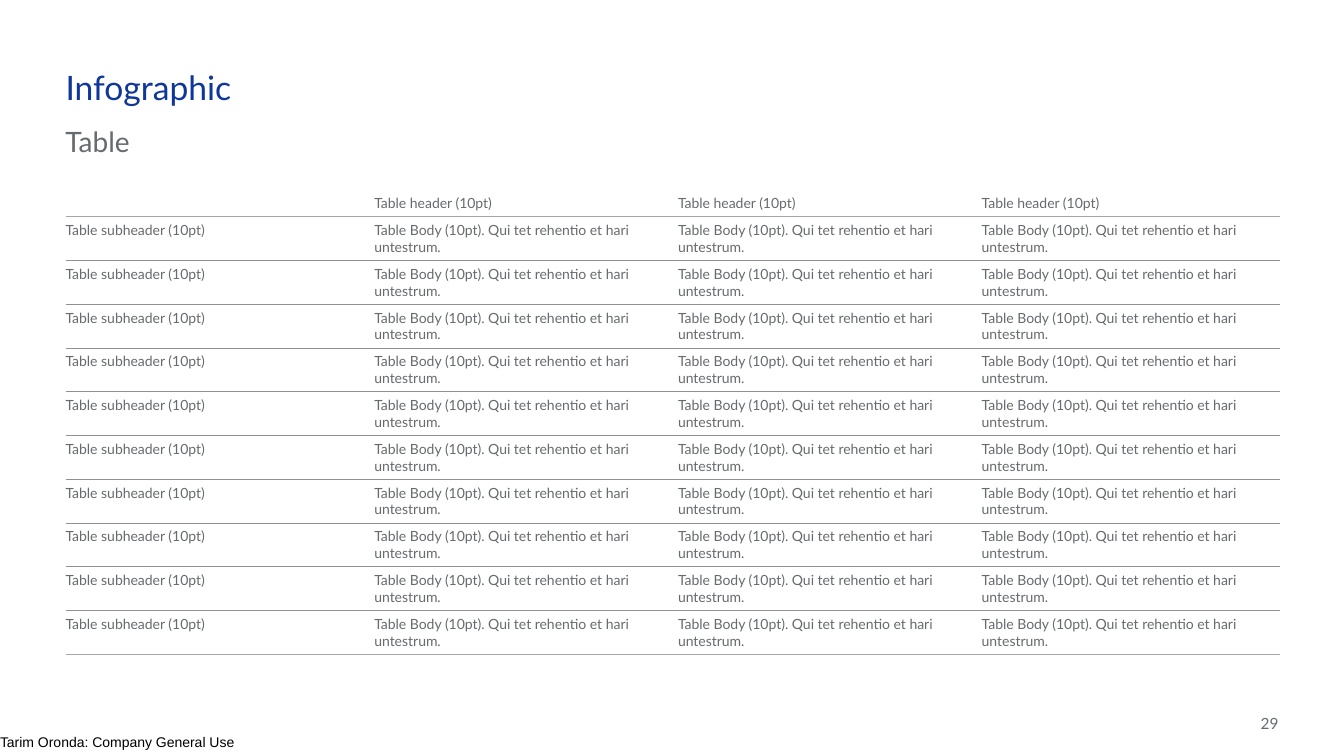
from lxml import etree
from pptx import Presentation
from pptx import util as u
from pptx.dml.color import RGBColor
from pptx.enum import text as t
from pptx.oxml.ns import qn

WIDE, HIGH = u.Inches(13.33), u.Inches(7.5)
GREY, BLUE, BLACK = "676A6E", "0F3699", "000000"
EDGE, RULE = ("A3A5A9", 1), ("8F9194", 0.75)
PAD = u.Inches(0.05)
PLAIN = "{2D5ABB26-0587-4C30-8999-92F81FD0307C}"
BODY = "Table Body (10pt). Qui tet rehentio et hari untestrum."


def paint(hue):
    return RGBColor.from_string(hue)


def share(x, y, w, h):
    return [int(n * full / 100) for n, full in zip((x, y, w, h), (WIDE, HIGH) * 2)]


def write(par, words, size, hue=GREY, font="Lato"):
    run = par.add_run()
    run.text = words
    run.font.size = u.Pt(size)
    run.font.name = font
    run.font.color.rgb = paint(hue)


def label(slide, box, words, size, hue=GREY, font="Lato", side=0, pad=PAD,
          mid=False, wrap=True):
    frame = slide.shapes.add_textbox(*box).text_frame
    frame.word_wrap = wrap
    frame.margin_left = frame.margin_right = side
    frame.margin_top = frame.margin_bottom = pad
    frame.vertical_anchor = t.MSO_ANCHOR.MIDDLE if mid else t.MSO_ANCHOR.TOP
    par = frame.paragraphs[0]
    write(par, words, size, hue, font)
    return par


def heading(slide, box):
    x, y, w, h = box
    inset = u.Inches(0.1)
    title = label(slide, (x, y, w, h // 2), "Infographic", 24, BLUE)
    title.space_before = u.Pt(6)
    props = title._p.get_or_add_pPr()
    props.set("marL", str(u.Inches(0.25)))
    props.set("indent", str(-u.Inches(0.25)))
    sub = label(slide, (x - inset, y + h // 2, w, h // 2), "Table", 20, side=inset)
    sub.space_before = u.Pt(6)


def border(cell, tag, hue, width):
    props = cell._tc.get_or_add_tcPr()
    line = etree.SubElement(props, qn(tag), w=str(u.Pt(width)))
    fill = etree.SubElement(line, qn("a:solidFill"))
    etree.SubElement(fill, qn("a:srgbClr"), val=hue)


def dress(cell, row, col, last):
    cell.margin_left = 0 if row and not col else PAD
    cell.margin_right = cell.margin_top = cell.margin_bottom = PAD
    cell.vertical_anchor = t.MSO_ANCHOR.TOP if row else t.MSO_ANCHOR.BOTTOM
    if row:
        border(cell, "a:lnT", *(EDGE if row == 1 else RULE))
    border(cell, "a:lnB", *(EDGE if row in (0, last) else RULE))
    cell.fill.background()


def grid(slide, box, data):
    x, y, w, h = box
    rows, cols = len(data), len(data[0])
    table = slide.shapes.add_table(rows, cols, x, y, w, h).table
    table.first_row = table.horz_banding = False
    table._tbl.tblPr.find(qn("a:tableStyleId")).text = PLAIN
    top = u.Inches(0.37)
    for col in table.columns:
        col.width = w // cols
    for i, words in enumerate(data):
        table.rows[i].height = (h - top) // (rows - 1) if i else top
        for j, word in enumerate(words):
            cell = table.cell(i, j)
            dress(cell, i, j, rows - 1)
            par = cell.text_frame.paragraphs[0]
            if word:
                write(par, word, 10)
            else:
                etree.SubElement(par._p, qn("a:endParaRPr"), sz="1000")


def footer(slide, box):
    x, y, w, h = box
    page = label(slide, (x + int(w * 0.922), y, int(w * 0.0293), int(h * 0.55)),
                 "29", 11, mid=True)
    page.alignment = t.PP_ALIGN.RIGHT
    label(slide, (x, y + int(h * 0.4), int(w * 0.204), int(h * 0.6)),
          "Tarim Oronda: Company General Use", 10, BLACK, "Arial",
          pad=0, mid=True, wrap=False)


def main():
    deck = Presentation()
    deck.slide_width, deck.slide_height = WIDE, HIGH
    slide = deck.slides.add_slide(deck.slide_layouts[6])
    data = [[""] + ["Table header (10pt)"] * 3]
    data += [["Table subheader (10pt)"] + [BODY] * 3 for _ in range(10)]
    footer(slide, share(0, 94, 100, 6))
    grid(slide, share(4.88, 23.73, 90.4, 62.75), data)
    heading(slide, share(4.88, 8.13, 37.13, 15.4))
    deck.save("out.pptx")


if __name__ == "__main__":
    main()
